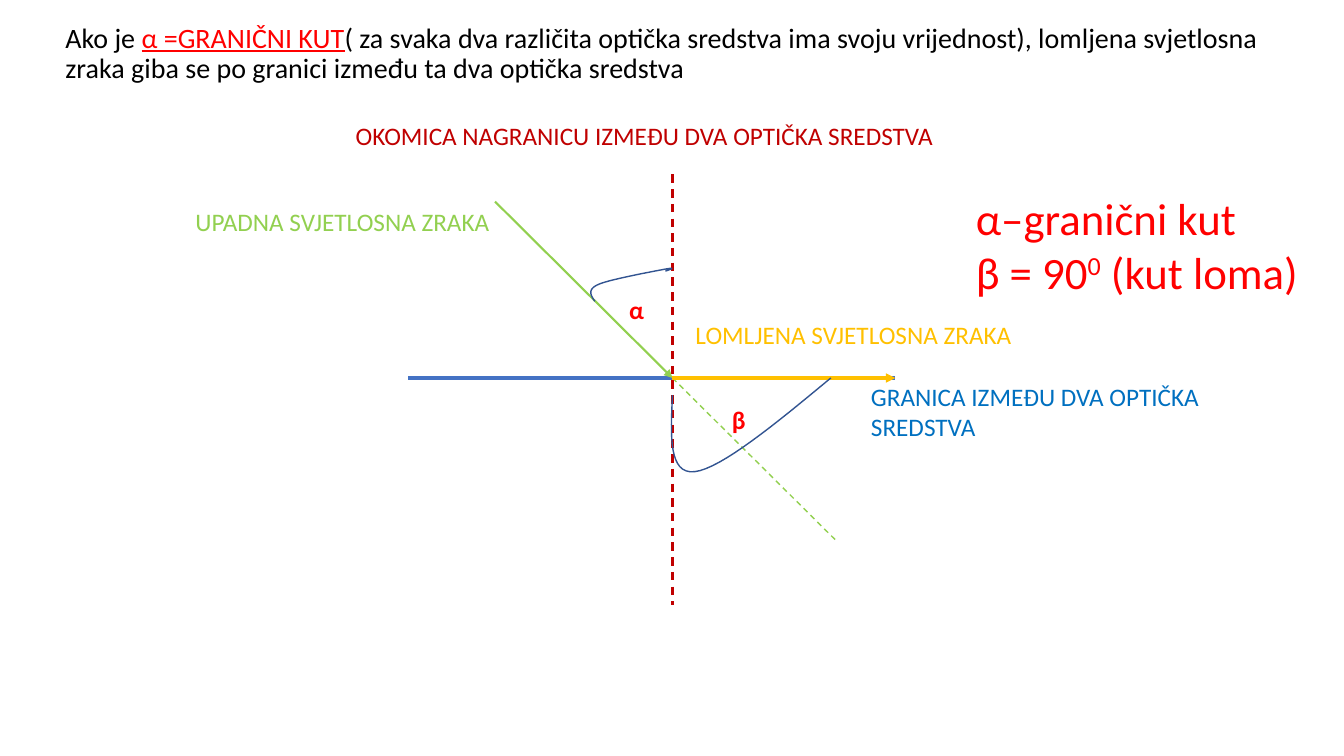
from dataclasses import dataclass

from lxml import etree
from pptx import Presentation
from pptx.dml.color import RGBColor
from pptx.enum.dml import MSO_LINE
from pptx.enum.shapes import MSO_CONNECTOR
from pptx.oxml.ns import qn
from pptx.util import Inches, Pt

STRAIGHT = MSO_CONNECTOR.STRAIGHT
DASH = MSO_LINE.DASH
CURVE_STEPS = 16


@dataclass(frozen=True)
class Theme:
    font: str = "Calibri"
    black: str = "000000"
    red: str = "FF0000"
    normal: str = "C00000"
    incident: str = "92D050"
    refracted: str = "FFC000"
    boundary: str = "4472C4"
    boundary_label: str = "0070C0"
    arc: str = "325491"
    title_size: int = 20
    label_size: int = 18
    formula_size: int = 32


THEME = Theme()


def add_text(slide, box, paragraphs, size, wrap=True):
    """Add a text box; each paragraph is a list of (text, colour) runs."""
    text_box = slide.shapes.add_textbox(*(Inches(length) for length in box))
    frame = text_box.text_frame
    frame.word_wrap = wrap
    for index, runs in enumerate(paragraphs):
        paragraph = frame.add_paragraph() if index else frame.paragraphs[0]
        for text, color in runs:
            run = paragraph.add_run()
            run.text = text
            run.font.name = THEME.font
            run.font.size = Pt(size)
            run.font.color.rgb = RGBColor.from_string(color)
    return frame


def add_label(slide, box, text, color, bold=False):
    frame = add_text(slide, box, [[(text, color)]], THEME.label_size)
    frame.paragraphs[0].runs[0].font.bold = bold


def add_line(slide, start, end, color, width, dashed=False, arrow=False):
    connector = slide.shapes.add_connector(
        STRAIGHT, *(Inches(length) for length in (*start, *end)))
    connector.line.color.rgb = RGBColor.from_string(color)
    connector.line.width = Pt(width)
    if dashed:
        connector.line.dash_style = DASH
    if arrow:
        line = connector.line._get_or_add_ln()
        etree.SubElement(line, qn("a:tailEnd"), type="triangle")
    etree.SubElement(connector._element.spPr, qn("a:effectLst"))


def bezier_points(start, segments):
    """Sample points along chained cubic curves, after the start point."""
    points = []
    for control_1, control_2, end in segments:
        for step in range(1, CURVE_STEPS + 1):
            t = step / CURVE_STEPS
            u = 1 - t
            points.append(tuple(
                u**3 * a + 3 * u**2 * t * b + 3 * u * t**2 * c + t**3 * d
                for a, b, c, d in zip(start, control_1, control_2, end)))
        start = end
    return points


def add_angle_arc(slide, origin, start, segments):
    """Draw an open curve given by offsets from the origin."""
    points = [(Inches(origin[0] + x), Inches(origin[1] + y))
              for x, y in [start, *bezier_points(start, segments)]]
    builder = slide.shapes.build_freeform(*points[0])
    builder.add_line_segments(points[1:], close=False)
    arc = builder.convert_to_shape()
    arc.shadow.inherit = False
    arc.fill.background()
    arc.line.color.rgb = RGBColor.from_string(THEME.arc)
    arc.line.width = Pt(1)


def add_statement(slide, box):
    frame = add_text(slide, box, [[
        ("Ako je ", THEME.black),
        ("α =GRANIČNI KUT", THEME.red),
        ("( za svaka dva različita optička sredstva ima svoju vrijednost), "
         "lomljena svjetlosna zraka giba se po granici između ta dva "
         "optička sredstva", THEME.black),
    ]], THEME.title_size)
    paragraph = frame.paragraphs[0]
    paragraph.line_spacing = 0.9
    paragraph.space_before = Pt(10)
    paragraph.runs[1].font.underline = True


def add_formulas(slide, box):
    frame = add_text(slide, box, [
        [("α–granični kut", THEME.red)],
        [(text, THEME.red) for text in ("β = 90", "0", " (kut loma)")],
    ], THEME.formula_size, wrap=False)
    exponent = frame.paragraphs[1].runs[1]
    exponent._r.get_or_add_rPr().set("baseline", "30000")


def add_ray_diagram(slide, origin):
    """Draw the rays around the point where light meets the boundary."""
    x, y = origin
    right = (x + 2.21, y)
    add_line(slide, (x - 2.62, y), right, THEME.boundary, 3)
    add_line(slide, (x, y - 2.02), (x, y + 2.25), THEME.normal, 1.5, dashed=True)
    add_line(slide, (x - 1.76, y - 1.75), origin, THEME.incident, 1.5, arrow=True)
    add_line(slide, origin, (x + 1.64, y + 1.63), THEME.incident, 1, dashed=True)
    add_angle_arc(slide, origin, (-0.77, -0.76), [
        ((-0.81, -0.82), (-0.85, -0.88), (-0.73, -0.93)),
        ((-0.62, -0.98), (-0.07, -1.08), (-0.07, -1.08)),
        ((0.04, -1.1), (-0.01, -1.08), (-0.07, -1.06)),
    ])
    add_line(slide, origin, right, THEME.refracted, 2.25, arrow=True)
    add_angle_arc(slide, origin, (0, 0.17), [
        ((-0.02, 0.57), (-0.04, 0.96), (0.22, 0.93)),
        ((0.48, 0.9), (1.03, 0.45), (1.57, 0)),
    ])

    add_label(slide, (x - 0.53, y - 0.88, 0.52, 0.4), "α", THEME.red, bold=True)
    add_label(slide, (x + 0.49, y + 0.21, 0.36, 0.4), "β", THEME.red, bold=True)
    add_label(slide, (x - 3.24, y - 2.61, 5.97, 0.4),
              "OKOMICA NAGRANICU IZMEĐU DVA OPTIČKA SREDSTVA", THEME.normal)
    add_label(slide, (x - 4.83, y - 1.75, 3.18, 0.4),
              "UPADNA SVJETLOSNA ZRAKA", THEME.incident)
    add_label(slide, (x + 0.13, y - 0.63, 3.47, 0.4),
              "LOMLJENA SVJETLOSNA ZRAKA", THEME.refracted)
    add_label(slide, (x + 1.87, y - 0.02, 3.85, 0.71),
              "GRANICA IZMEĐU DVA OPTIČKA SREDSTVA", THEME.boundary_label)


def main():
    presentation = Presentation()
    presentation.slide_width = Inches(13.33)
    presentation.slide_height = Inches(7.5)
    slide = presentation.slides.add_slide(presentation.slide_layouts[6])
    add_ray_diagram(slide, (6.67, 3.75))
    add_statement(slide, (0.55, 0.19, 12.12, 0.93))
    add_formulas(slide, (9.58, 1.84, 3.46, 1.18))
    presentation.save("out.pptx")


if __name__ == "__main__":
    main()
